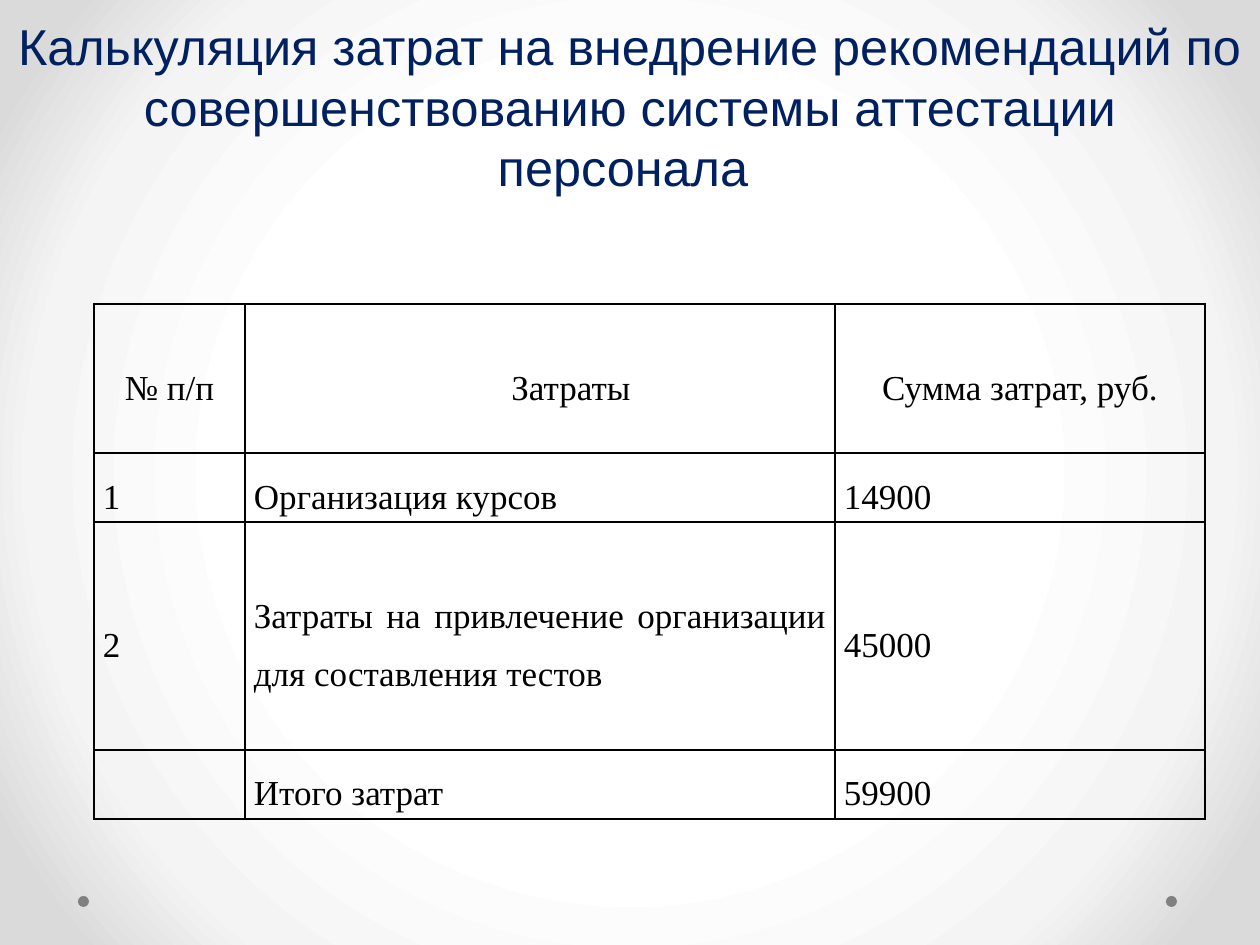
from dataclasses import dataclass

from lxml.etree import SubElement
from pptx import Presentation
from pptx.dml.color import RGBColor
from pptx.enum.shapes import MSO_SHAPE
from pptx.enum.text import MSO_ANCHOR, PP_ALIGN
from pptx.oxml.ns import qn
from pptx.util import Emu, Pt


@dataclass(frozen=True)
class Theme:
    title_font: str = "Arial"
    table_font: str = "Times New Roman"
    title_size: float = 28.8
    table_size: float = 20
    title_color: str = "002060"
    table_color: str = "000000"
    dot_color: str = "808080"
    background: tuple = ((50, "FFFFFF"), (76, "F4F4F4"), (92, "DADADA"))


THEME = Theme()
TITLE = "Калькуляция затрат на внедрение рекомендаций по совершенствованию системы аттестации персонала "
COLUMN_WIDTHS = (151, 590, 370)
ROW_HEIGHTS = (149, 69, 228, 69)
COSTS = (
    ("№ п/п", "Затраты", "Сумма затрат, руб."),
    ("1", "Организация курсов", "14900"),
    ("2", "Затраты на привлечение организации для составления тестов", "45000"),
    ("", "Итого затрат", "59900"),
)


def px(length):
    return Emu(round(length * 914400 / 126))


def set_font(paragraph, name, size, color):
    paragraph.font.name = name
    paragraph.font.size = Pt(size)
    paragraph.font.color.rgb = RGBColor.from_string(color)


def add_background(slide):
    """Fill the slide with a gradient that spreads in circles from its centre."""
    fill = slide.background.fill
    fill.gradient()
    gradient = slide.background._cSld.bg.bgPr.find(qn("a:gradFill"))
    for child in list(gradient):
        gradient.remove(child)
    stops = SubElement(gradient, qn("a:gsLst"))
    for position, color in THEME.background:
        stop = SubElement(stops, qn("a:gs"), pos=str(position * 1000))
        SubElement(stop, qn("a:srgbClr"), val=color)
    path = SubElement(gradient, qn("a:path"), path="circle")
    SubElement(path, qn("a:fillToRect"), l="50000", t="50000", r="50000", b="50000")


def add_footer_dots(slide, left, top, width, size):
    """Place one dot at each end of the footer strip."""
    for dot_left in (left, left + width - size):
        dot = slide.shapes.add_shape(
            MSO_SHAPE.OVAL, px(dot_left), px(top), px(size), px(size))
        dot.shadow.inherit = False
        dot.fill.solid()
        dot.fill.fore_color.rgb = RGBColor.from_string(THEME.dot_color)
        dot.line.fill.background()


def add_title(slide, left, top, width, height):
    frame = slide.shapes.add_textbox(px(left), px(top), px(width), px(height)).text_frame
    frame.word_wrap = True
    frame.vertical_anchor = MSO_ANCHOR.BOTTOM
    paragraph = frame.paragraphs[0]
    paragraph.text = TITLE
    paragraph.alignment = PP_ALIGN.CENTER
    set_font(paragraph, THEME.title_font, THEME.title_size, THEME.title_color)


def add_borders(cell):
    properties = cell._tc.get_or_add_tcPr()
    for position, side in enumerate(("a:lnL", "a:lnR", "a:lnT", "a:lnB")):
        line = SubElement(properties, qn(side), w=str(Pt(1)))
        fill = SubElement(line, qn("a:solidFill"))
        SubElement(fill, qn("a:srgbClr"), val=THEME.table_color)
        properties.insert(position, line)


def fill_cell(cell, text, alignment):
    cell.fill.background()
    add_borders(cell)
    cell.vertical_anchor = MSO_ANCHOR.MIDDLE
    cell.margin_left = cell.margin_right = px(9)
    cell.margin_top = cell.margin_bottom = 0
    paragraph = cell.text_frame.paragraphs[0]
    paragraph.text = text
    paragraph.alignment = alignment
    paragraph.line_spacing = 1.5
    paragraph.space_before = Pt(12)
    set_font(paragraph, THEME.table_font, THEME.table_size, THEME.table_color)


def add_cost_table(slide, left, top):
    frame = slide.shapes.add_table(
        len(ROW_HEIGHTS), len(COLUMN_WIDTHS), px(left), px(top),
        px(sum(COLUMN_WIDTHS)), px(sum(ROW_HEIGHTS)))
    table = frame.table
    table.first_row = table.horz_banding = False
    for column, width in zip(table.columns, COLUMN_WIDTHS):
        column.width = px(width)
    for row, height, texts in zip(table.rows, ROW_HEIGHTS, COSTS):
        row.height = px(height)
        alignment = PP_ALIGN.CENTER if texts is COSTS[0] else PP_ALIGN.JUSTIFY
        for cell, text in zip(row.cells, texts):
            fill_cell(cell, text, alignment)
    heading = table.cell(0, 1).text_frame.paragraphs[0]
    heading._p.get_or_add_pPr().set("indent", str(px(62)))


def main():
    presentation = Presentation()
    presentation.slide_width = px(1260)
    presentation.slide_height = px(945)
    slide = presentation.slides.add_slide(presentation.slide_layouts[6])
    add_background(slide)
    add_footer_dots(slide, 78, 896, 1099, 11)
    add_title(slide, 0, 45, 1260, 158)
    add_cost_table(slide, 94, 304)
    presentation.save("out.pptx")


if __name__ == "__main__":
    main()
